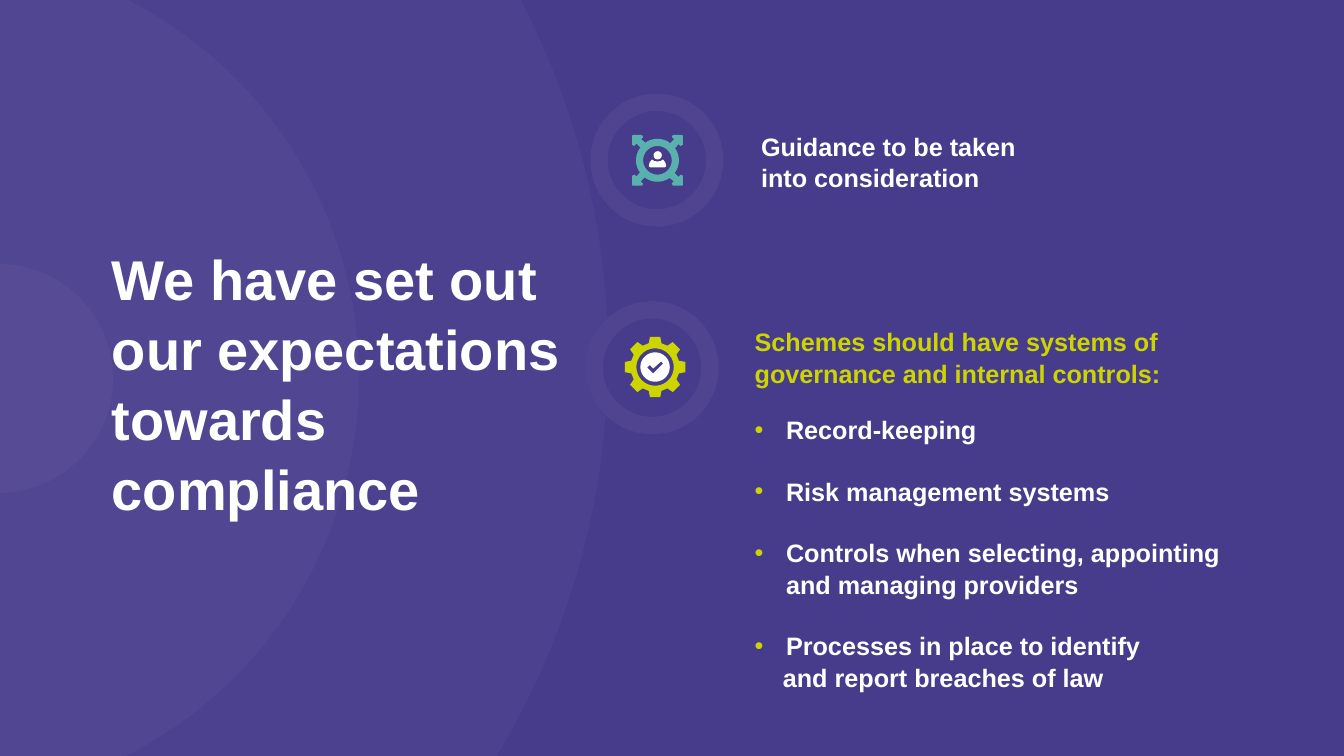
"""Builds a slide on the expectations set for compliance."""
from math import cos, radians, sin

from lxml import etree
from pptx import Presentation
from pptx.dml.color import RGBColor
from pptx.enum.shapes import MSO_SHAPE
from pptx.oxml.ns import qn
from pptx.util import Cm, Pt

OVAL = MSO_SHAPE.OVAL
DONUT = MSO_SHAPE.DONUT
WHITE, PURPLE, TEAL, LIME = "FFFFFF", "473B8B", "59B1AD", "CDD500"
BASE = {"name": "Arial", "size": Pt(18), "bold": True}
TITLE = {**BASE, "size": Pt(40)}
FRAME = dict.fromkeys(
    ("margin_left", "margin_top", "margin_right", "margin_bottom"), 0)
GAP = Cm(0.76)
SIDE = 3.35

RINGS = [(-23.57, -10.46, 38.89), (-12.32, -1.17, 21.36), (-2.92, 6.65, 5.77)]
ARROW = [(0.32, -0.43), (0.42, -0.53), (0.36, -0.59), (0.39, -0.64),
         (0.62, -0.64), (0.64, -0.62), (0.64, -0.39), (0.58, -0.36),
         (0.53, -0.41), (0.44, -0.3)]
TOOTH = [(-0.16, -0.6), (-0.13, -0.76), (0.13, -0.76), (0.16, -0.6)]
TICK = [(-0.05, 0.16), (-0.2, 0.01), (-0.13, -0.05), (-0.05, 0.04),
        (0.15, -0.14), (0.2, -0.09)]
BODY = [(-0.14, -0.02), (-0.08, 0.02), (0, 0.03), (0.08, 0.02),
        (0.14, -0.02), (0.2, 0.06), (0.22, 0.15), (0.18, 0.18),
        (-0.18, 0.18), (-0.22, 0.15), (-0.2, 0.06)]
ITEMS = ["Record-keeping", "Risk management systems",
         "Controls when selecting, appointing and managing providers",
         "Processes in place to identify"]


def color(code):
    """Turn a hex string into a colour."""
    return RGBColor.from_string(code)


def apply(target, values):
    """Set each named value on the target."""
    for name, value in values.items():
        setattr(target, name, value)


def paint(shape, code, alpha=None):
    """Fill a shape plainly, with an optional opacity in percent."""
    shape.shadow.inherit = False
    shape.fill.solid()
    shape.fill.fore_color.rgb = color(code)
    shape.line.fill.background()
    if alpha:
        node = shape.element.spPr.find(".//" + qn("a:srgbClr"))
        etree.SubElement(node, qn("a:alpha"), val=str(alpha * 1000))


def disc(shapes, left, top, size, code, alpha=None, kind=OVAL):
    """Add a round shape and return it."""
    shape = shapes.add_shape(kind, Cm(left), Cm(top), Cm(size), Cm(size))
    paint(shape, code, alpha)
    return shape


def arc(radius, start=0, stop=360, step=6):
    """List points along an arc."""
    return [(radius * cos(radians(a)), radius * sin(radians(a)))
            for a in range(start, stop, step)]


def spin(points, count):
    """Repeat points evenly around the centre."""
    turns = [radians(360 * i / count) for i in range(count)]
    return [(x * cos(t) - y * sin(t), x * sin(t) + y * cos(t))
            for t in turns for x, y in points]


def trace(shapes, mid, loops, code):
    """Draw closed loops around a middle point as one outline."""
    paths = [[(Cm(mid[0] + x), Cm(mid[1] + y)) for x, y in loop]
             for loop in loops]
    pen = shapes.build_freeform(*paths[0][0])
    pen.add_line_segments(paths[0][1:])
    for path in paths[1:]:
        pen.move_to(*path[0])
        pen.add_line_segments(path[1:])
    paint(pen.convert_to_shape(), code)


def badge(slide, left, top):
    """Add a ringed disc in a group and return the group's shapes."""
    shapes = slide.shapes.add_group_shape().shapes
    disc(shapes, left, top, SIDE, PURPLE)
    ring = disc(shapes, left, top, SIDE, WHITE, 5, DONUT)
    ring.adjustments[0] = 0.13
    return shapes


def people(slide):
    """Add the badge of a person with four arrows."""
    shapes = badge(slide, 14.88, 2.36)
    mid = 16.57, 4.04
    disc(shapes, 16.47, 3.81, 0.21, WHITE)
    trace(shapes, mid, [BODY], WHITE)
    rim = spin(ARROW + arc(0.54, -30, 36), 4)
    trace(shapes, mid, [rim, arc(0.36)], TEAL)


def gear(slide):
    """Add the badge of a gear with a tick."""
    shapes = badge(slide, 14.76, 7.59)
    mid = 16.51, 9.25
    trace(shapes, mid, [arc(0.37), TICK], WHITE)
    trace(shapes, mid, [spin(TOOTH, 8), arc(0.47)], LIME)


def block(slide, area, lines, code=WHITE, font=BASE):
    """Add a text box and return its paragraphs."""
    frame = slide.shapes.add_textbox(*map(Cm, area)).text_frame
    apply(frame, {**FRAME, "word_wrap": True})
    frame.text = "\n".join(lines)
    for para in frame.paragraphs:
        para.line_spacing = 1.04
        apply(para.runs[0].font, font)
        para.runs[0].font.color.rgb = color(code)
    return frame.paragraphs


def bullet(para):
    """Give a paragraph a lime bullet and a hanging indent."""
    props = para._p.get_or_add_pPr()
    props.set("marL", str(Cm(0.79)))
    props.set("indent", str(-Cm(0.79)))
    tint = etree.SubElement(props, qn("a:buClr"))
    etree.SubElement(tint, qn("a:srgbClr"), val=LIME)
    etree.SubElement(props, qn("a:buFont"), typeface="Arial")
    etree.SubElement(props, qn("a:buChar"), char="•")


def points(slide):
    """Add the bulleted list of controls."""
    *items, tail = block(slide, (19.02, 10.41, 12.9, 6.93),
                         ITEMS + ["and report breaches of law"])
    for index, para in enumerate(items):
        para.space_before = GAP if index else 0
        bullet(para)
    tail._p.get_or_add_pPr().set("marL", str(Cm(0.71)))


def main():
    """Build and save the slide."""
    deck = Presentation()
    apply(deck, {"slide_width": Cm(33.87), "slide_height": Cm(19.05)})
    slide = deck.slides.add_slide(deck.slide_layouts[6])
    slide.background.fill.solid()
    slide.background.fill.fore_color.rgb = color(PURPLE)
    for ring in RINGS:
        disc(slide.shapes, *ring, WHITE, 3)
    block(slide, (19.18, 3.28, 7.29, 1.55),
          ["Guidance to be taken into consideration"])
    block(slide, (2.82, 6.1, 11.91, 6.83),
          ["We have set out our expectations towards compliance"], font=TITLE)
    people(slide)
    block(slide, (19.02, 8.2, 10.82, 1.55),
          ["Schemes should have systems of governance and internal controls:"],
          LIME)
    points(slide)
    gear(slide)
    deck.save("out.pptx")


if __name__ == "__main__":
    main()
